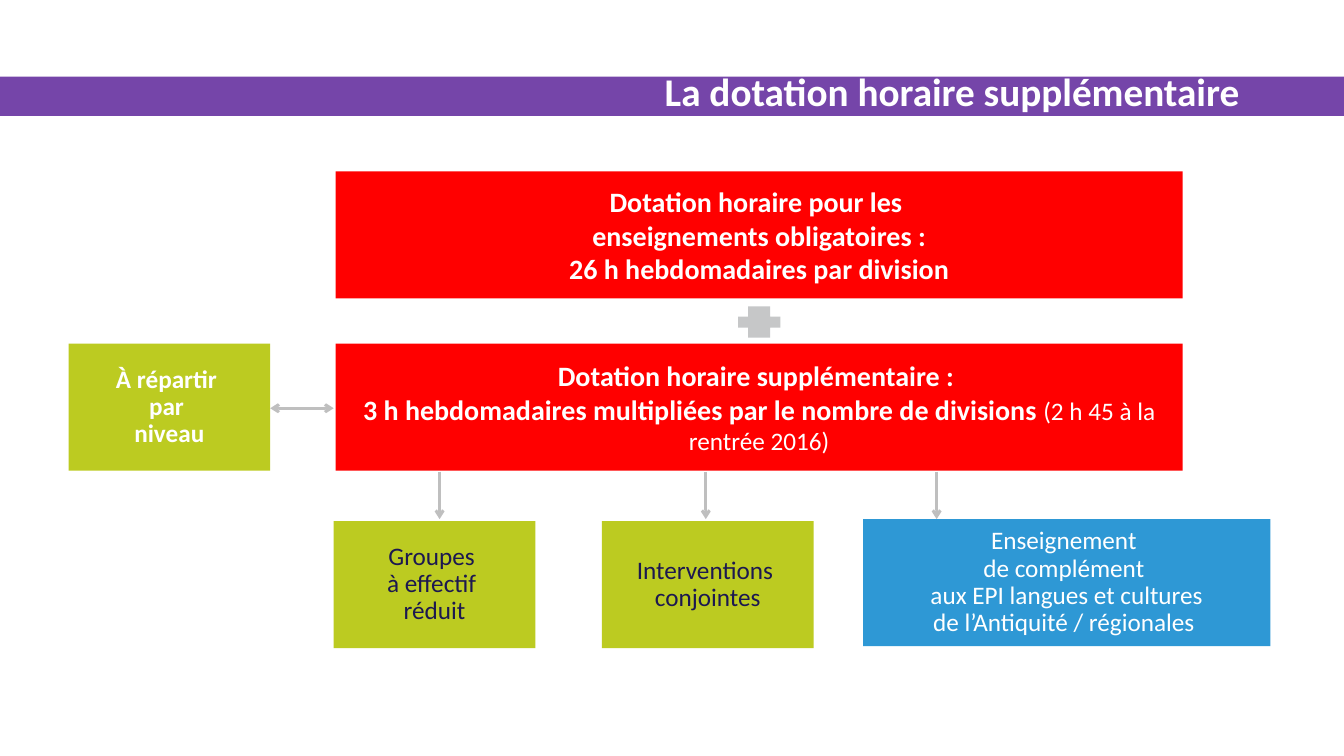
from lxml import etree
from pptx import Presentation
from pptx.dml.color import RGBColor
from pptx.enum.shapes import MSO_CONNECTOR, MSO_SHAPE
from pptx.enum.text import MSO_ANCHOR, MSO_AUTO_SIZE, PP_ALIGN
from pptx.oxml.ns import qn
from pptx.util import Inches, Pt

RECT, PLUS = MSO_SHAPE.RECTANGLE, MSO_SHAPE.CROSS
LINE = MSO_CONNECTOR.STRAIGHT
MIDDLE, FIXED = MSO_ANCHOR.MIDDLE, MSO_AUTO_SIZE.NONE
CENTER, RIGHT = PP_ALIGN.CENTER, PP_ALIGN.RIGHT

PURPLE = RGBColor(0x75, 0x45, 0xA9)
GREEN = RGBColor(0xBC, 0xCB, 0x21)
RED = RGBColor(0xFF, 0x00, 0x00)
BLUE = RGBColor(0x2E, 0x98, 0xD5)
NAVY = RGBColor(0x1C, 0x18, 0x50)
WHITE = RGBColor(0xFF, 0xFF, 0xFF)
SILVER = RGBColor(0xC6, 0xC7, 0xC8)
GREY = RGBColor(0xBF, 0xBF, 0xBF)

FONT = "Calibri"
TALL = 1.26
MAIN_TOP = 3.41
MAIN_LEFT = 3.33
MAIN_WIDE = 8.4


def add_run(para, text, size, color, bold=False):
    """Add text to a paragraph, with a line break at each newline."""
    for i, line in enumerate(text.split("\n")):
        if i:
            para.add_line_break()
        run = para.add_run()
        run.text = line
        font = run.font
        font.name, font.size, font.bold = FONT, Pt(size), bold
        font.color.rgb = color


def add_block(slide, kind, left, top, width, height, fill):
    """Add a plain filled shape without outline or shadow."""
    block = slide.shapes.add_shape(
        kind, Inches(left), Inches(top), Inches(width), Inches(height))
    block.shadow.inherit = False
    block.fill.solid()
    block.fill.fore_color.rgb = fill
    block.line.fill.background()
    return block


def add_box(slide, left, top, width, fill, color, paras,
            size=18, bold=False, space=0.9):
    """Add a text box of the diagram and return its last paragraph."""
    frame = add_block(slide, RECT, left, top, width, TALL, fill).text_frame
    frame.word_wrap = True
    frame.vertical_anchor = MIDDLE
    for i, text in enumerate(paras):
        para = frame.add_paragraph() if i else frame.paragraphs[0]
        para.alignment = CENTER
        para.line_spacing = space
        add_run(para, text, size, color, bold)
    return para


def add_arrow(slide, x1, y1, x2, y2, ends=("tailEnd",)):
    """Add a grey connector with open arrowheads at the given ends."""
    arrow = slide.shapes.add_connector(
        LINE, Inches(x1), Inches(y1), Inches(x2), Inches(y2))
    arrow.line.color.rgb = GREY
    arrow.line.width = Pt(2)
    line = arrow.line._get_or_add_ln()
    for end in ends:
        etree.SubElement(line, qn("a:" + end), type="arrow")
    etree.SubElement(arrow._element.spPr, qn("a:effectLst"))


def add_title(slide, text):
    """Place the purple band behind the title and fill in the title."""
    band = add_block(slide, RECT, 0, 0.76, 13.33, 0.39, PURPLE)
    slide.shapes._spTree.insert(2, band._element)
    title = slide.shapes.title
    title.left, title.top = Inches(1.26), Inches(0.34)
    title.width, title.height = Inches(11.13), Inches(1.13)
    frame = title.text_frame
    frame.auto_size = FIXED
    frame.vertical_anchor = MIDDLE
    para = frame.paragraphs[0]
    para.alignment = RIGHT
    add_run(para, text, 28, WHITE, True)


def main():
    """Build the slide and save it."""
    deck = Presentation()
    deck.slide_width, deck.slide_height = Inches(13.33), Inches(7.5)
    slide = deck.slides.add_slide(deck.slide_layouts[5])
    add_title(slide, "La dotation horaire supplémentaire")

    add_box(slide, MAIN_LEFT, 1.7, MAIN_WIDE, RED, WHITE,
            ["Dotation horaire pour les ", "enseignements obligatoires :",
             "26 h hebdomadaires par division"], 20, True, 1.0)
    plus = add_block(slide, PLUS, 7.32, 3.04, 0.42, 0.31, SILVER)
    plus.adjustments[0] = 0.325
    extra = add_box(slide, MAIN_LEFT, MAIN_TOP, MAIN_WIDE, RED, WHITE,
                    ["Dotation horaire supplémentaire : \n3 h hebdomadaires "
                     "multipliées par le nombre de divisions "], 20, True, 1.0)
    add_run(extra, "(2 h 45 à la rentrée 2016)", 18, WHITE)

    add_box(slide, 0.68, MAIN_TOP, 2, GREEN, WHITE,
            ["À répartir \npar \nniveau"], bold=True)
    add_box(slide, 3.31, 5.17, 2, GREEN, NAVY,
            ["Groupes \nà effectif \nréduit"])
    add_box(slide, 5.97, 5.17, 2.1, GREEN, NAVY,
            ["Interventions ", "conjointes"])
    add_box(slide, 8.56, 5.15, 4.04, BLUE, WHITE,
            ["Enseignement \nde complément ", "aux EPI langues et cultures",
             "de l’Antiquité / régionales "])

    for x in (4.36, 7, 9.29):
        add_arrow(slide, x, 4.68, x, 5.15)
    add_arrow(slide, 3.31, 4.05, 2.68, 4.05, ("headEnd", "tailEnd"))
    deck.save("out.pptx")


if __name__ == "__main__":
    main()
